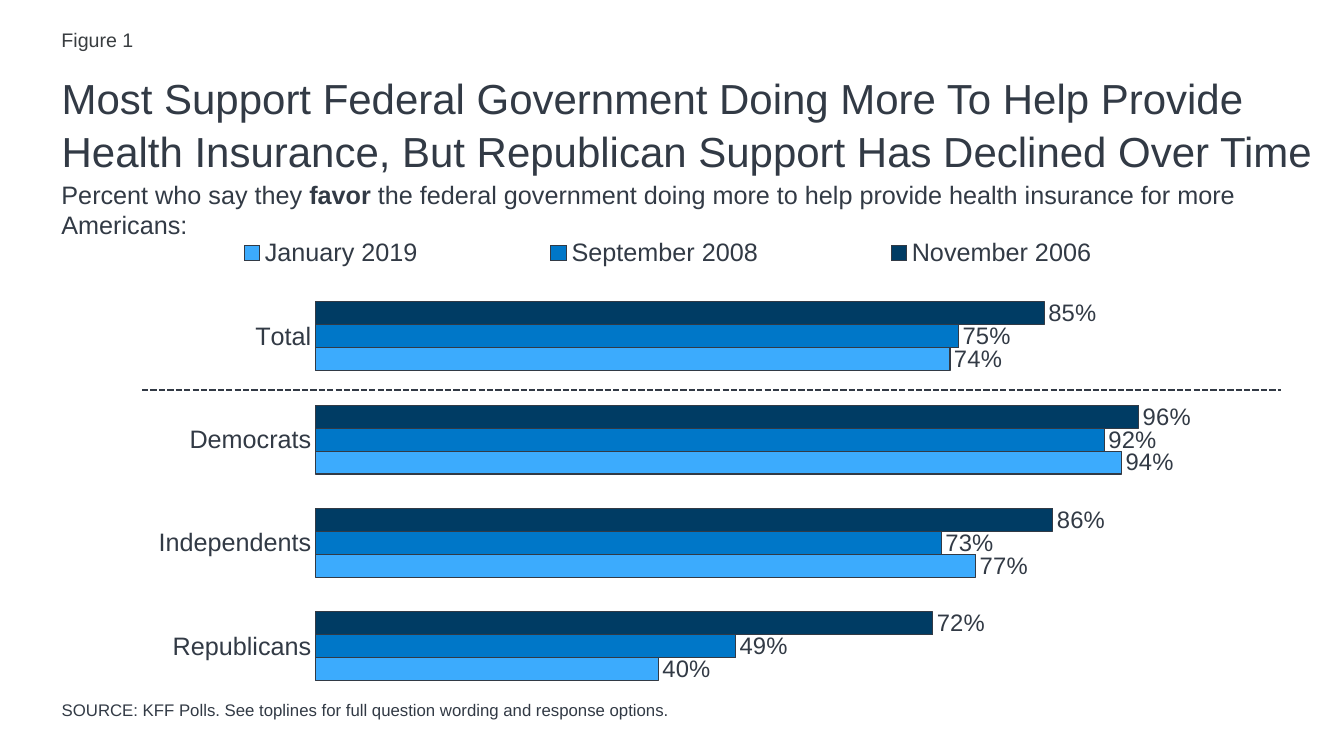
"""Build a slide on support for federal help with health insurance."""
import pptx
import pptx.chart.data
import pptx.dml.color
import pptx.enum.chart
import pptx.enum.dml
import pptx.enum.shapes
import pptx.enum.text
import pptx.oxml
import pptx.oxml.ns
import pptx.util

Cm, Pt = pptx.util.Cm, pptx.util.Pt
RGB = pptx.dml.color.RGBColor
Anchor = pptx.enum.text.MSO_ANCHOR

INK = RGB(0x32, 0x3A, 0x45)
GREY = RGB(0x39, 0x3D, 0x40)
NAVY = RGB(0x00, 0x3C, 0x64)
BLUE = RGB(0x00, 0x77, 0xC8)
SKY = RGB(0x3C, 0xAB, 0xFD)

TITLE = ("Most Support Federal Government Doing More To Help Provide "
         "Health Insurance, But Republican Support Has Declined Over Time")
FIGURE = "Figure 1"
QUESTION = [("Percent who say they ", False), ("favor", True),
            (" the federal government doing more to help provide health "
             "insurance for more Americans:", False)]
SOURCE = ("SOURCE: KFF Polls. See toplines for full question wording "
          "and response options.")
GROUPS = ["Total", "Democrats", "Independents", "Republicans"]
POLLS = [("November 2006", NAVY, (0.85, 0.96, 0.86, 0.72)),
         ("September 2008", BLUE, (0.75, 0.92, 0.73, 0.49)),
         ("January 2019", SKY, (0.74, 0.94, 0.77, 0.4))]

LEFT = 1.3
PLOT_BOX = (0.208, 0.11, 0.735, 0.88)
LEGEND_BOX = (0.04, 0, 0.94, 0.085)


def style(obj, values):
    """Set every attribute named in a dict of format values."""
    for name, value in values.items():
        setattr(obj, name, value)


def set_font(font, size, color=INK, bold=False):
    """Give a font its face, size, weight and colour."""
    style(font, {"name": "Arial", "size": Pt(size), "bold": bold})
    font.color.rgb = color


def write(sp, box, runs, size, color=INK, anchor=Anchor.TOP, spacing=1.0):
    """Place a text shape and fill its single paragraph."""
    style(sp, dict(zip(("left", "top", "width", "height"), map(Cm, box))))
    tf = sp.text_frame
    style(tf, {"word_wrap": True, "vertical_anchor": anchor,
               "auto_size": pptx.enum.text.MSO_AUTO_SIZE.NONE})
    p = tf.paragraphs[0]
    style(p, {"alignment": pptx.enum.text.PP_ALIGN.LEFT,
              "line_spacing": spacing, "space_before": Pt(0)})
    for text, bold in runs:
        r = p.add_run()
        r.text = text
        set_font(r.font, size, color, bold)
    return p


def place(element, box, inner=False):
    """Give a chart part a manual layout in fractions of the chart."""
    ns = pptx.oxml.ns.nsdecls("c")
    target = '<c:layoutTarget val="inner"/>' if inner else ""
    modes = "".join(f'<c:{k}Mode val="edge"/>' for k in "xy")
    sizes = "".join(f'<c:{k} val="{v}"/>' for k, v in zip("xywh", box))
    layout = pptx.oxml.parse_xml(
        f"<c:layout {ns}><c:manualLayout>{target}{modes}{sizes}"
        "</c:manualLayout></c:layout>")
    for old in element.findall(pptx.oxml.ns.qn("c:layout")):
        element.remove(old)
    element.insert(0 if inner else 1, layout)


def add_poll_chart(s):
    """Add the clustered bars of support by party and poll."""
    enums = pptx.enum.chart
    data = pptx.chart.data.CategoryChartData(number_format="0%")
    data.categories = GROUPS
    for name, _, shares in POLLS:
        data.add_series(name, shares)
    chart = s.shapes.add_chart(enums.XL_CHART_TYPE.BAR_CLUSTERED, Cm(1.83),
                               Cm(5.87), Cm(29.41), Cm(11.84), data).chart
    style(chart, {"has_title": False, "has_legend": True})
    set_font(chart.font, 10)
    style(chart.legend, {"position": enums.XL_LEGEND_POSITION.TOP,
                         "include_in_layout": False})
    set_font(chart.legend.font, 18)
    no_ticks = {"major_tick_mark": enums.XL_TICK_MARK.NONE,
                "minor_tick_mark": enums.XL_TICK_MARK.NONE,
                "has_major_gridlines": False}
    style(chart.category_axis, {**no_ticks, "reverse_order": True})
    chart.category_axis.format.line.fill.background()
    set_font(chart.category_axis.tick_labels.font, 18)
    style(chart.value_axis, {**no_ticks, "visible": False, "minimum_scale": 0,
                             "maximum_scale": 1, "major_unit": 0.2})
    plot = chart.plots[0]
    style(plot, {"gap_width": 150, "overlap": 0, "vary_by_categories": False})
    for series, (_, color, _) in zip(plot.series, POLLS):
        series.format.fill.solid()
        series.format.fill.fore_color.rgb = color
        series.format.line.color.rgb = INK
        series.format.line.width = Pt(0.75)
        labels = series.data_labels
        style(labels, {"show_value": True, "number_format": "0%",
                       "number_format_is_linked": False,
                       "position": enums.XL_LABEL_POSITION.OUTSIDE_END})
        set_font(labels.font, 17)
    place(chart.element.chart.plotArea, PLOT_BOX, inner=True)
    place(chart.element.chart.find(pptx.oxml.ns.qn("c:legend")), LEGEND_BOX)


def add_divider(s):
    """Add the dashed line between the total and the parties."""
    y = Cm(9.83)
    line = s.shapes.add_connector(pptx.enum.shapes.MSO_CONNECTOR.STRAIGHT,
                                  Cm(3.58), y, Cm(32.28), y)
    line.line.color.rgb = INK
    style(line.line, {"width": Pt(1.5),
                      "dash_style": pptx.enum.dml.MSO_LINE.SQUARE_DOT})
    line.element.spPr.append(pptx.oxml.parse_xml(
        f'<a:effectLst {pptx.oxml.ns.nsdecls("a")}/>'))


def main():
    """Compose the slide and save it."""
    prs = pptx.Presentation()
    style(prs, {"slide_width": Cm(33.87), "slide_height": Cm(19.05)})
    s = prs.slides.add_slide(prs.slide_layouts[1])
    write(s.shapes.title, (LEFT, 1.63, 32.11, 2.34), [(TITLE, False)], 30,
          spacing=1.05)
    p = write(s.placeholders[1], (LEFT, 16.36, 25.5, 1.9), [(SOURCE, False)],
              12, anchor=Anchor.BOTTOM)
    pPr = p._p.get_or_add_pPr()
    pPr.set("marL", "0")
    pPr.set("indent", "0")
    pPr.append(pptx.oxml.parse_xml(
        f'<a:buNone {pptx.oxml.ns.nsdecls("a")}/>'))
    for box, runs, size, color in (
            ((LEFT, 0.58, 7.9, 1.02), [(FIGURE, False)], 14, GREY),
            ((LEFT, 4.39, 31.29, 1.8), QUESTION, 18, INK)):
        write(s.shapes.add_textbox(0, 0, 0, 0), box, runs, size, color)
    add_poll_chart(s)
    add_divider(s)
    prs.save("out.pptx")


if __name__ == "__main__":
    main()
